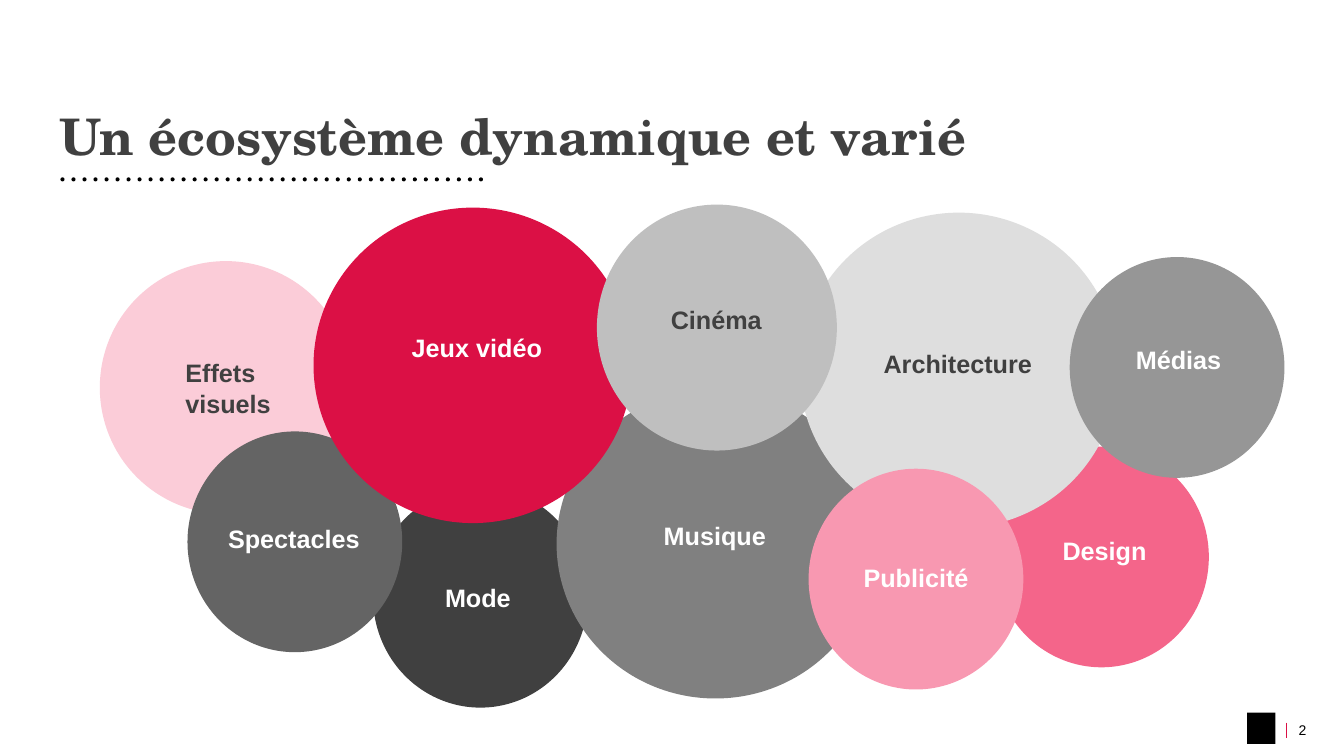
from dataclasses import dataclass

from lxml.etree import SubElement
from pptx import Presentation
from pptx.dml.color import RGBColor
from pptx.enum.shapes import MSO_CONNECTOR, MSO_SHAPE
from pptx.enum.text import MSO_ANCHOR, PP_ALIGN
from pptx.oxml.ns import qn
from pptx.slide import Slide
from pptx.text.text import TextFrame
from pptx.util import Inches, Pt

COLOURS = {
    "black": "000000",
    "white": "FFFFFF",
    "charcoal": "404040",
    "dark grey": "646464",
    "grey": "808080",
    "mid grey": "969696",
    "silver": "BFBFBF",
    "pale grey": "DEDEDE",
    "crimson": "DB1045",
    "rose": "F4658A",
    "pink": "F898B1",
    "pale pink": "FBCCD8",
}
SERIF = "TeX Gyre Schola"
SANS = "Arial"
DOT_COUNT = 39
DOT_FIRST, DOT_LAST = 0.6, 4.75


@dataclass(frozen=True)
class Box:
    left: float
    top: float
    width: float
    height: float


@dataclass(frozen=True)
class Bubble:
    name: str
    fill: str
    circle: Box
    label: Box
    text_colour: str = "white"
    alignment: PP_ALIGN = PP_ALIGN.CENTER


BUBBLES = [
    Bubble("Mode", "charcoal", Box(3.7, 4.83, 2.13, 2.19), Box(4.28, 5.73, 0.92, 0.4)),
    Bubble("Design", "rose", Box(9.86, 4.43, 2.13, 2.19), Box(10.34, 5.26, 1.23, 0.4)),
    Bubble("Effets\nvisuels", "pale pink", Box(0.99, 2.59, 2.5, 2.51),
           Box(1.74, 3.5, 1.44, 0.71), "charcoal", PP_ALIGN.LEFT),
    Bubble("Spectacles", "dark grey", Box(1.86, 4.28, 2.13, 2.19), Box(2.13, 5.14, 1.57, 0.4)),
    Bubble("Musique", "grey", Box(5.52, 3.86, 3.15, 3.07), Box(6.36, 5.11, 1.46, 0.4)),
    Bubble("Jeux vidéo", "crimson", Box(3.11, 2.06, 3.16, 3.13), Box(3.65, 3.25, 2.16, 0.4)),
    Bubble("Architecture", "pale grey", Box(7.93, 2.11, 3.16, 3.13),
           Box(8.58, 3.41, 1.84, 0.4), "charcoal"),
    Bubble("Publicité", "pink", Box(8.02, 4.65, 2.13, 2.19), Box(8.34, 5.53, 1.49, 0.4)),
    Bubble("Médias", "mid grey", Box(10.61, 2.55, 2.13, 2.19), Box(11.16, 3.37, 1.06, 0.4)),
    Bubble("Cinéma", "silver", Box(5.92, 2.03, 2.38, 2.44),
           Box(6.34, 2.97, 1.53, 0.4), "charcoal"),
]


def colour(name: str) -> RGBColor:
    return RGBColor.from_string(COLOURS[name])


def inches(box: Box) -> tuple[Inches, Inches, Inches, Inches]:
    return Inches(box.left), Inches(box.top), Inches(box.width), Inches(box.height)


def add_filled(slide: Slide, kind: MSO_SHAPE, box: Box, fill: str) -> None:
    shape = slide.shapes.add_shape(kind, *inches(box))
    shape.shadow.inherit = False
    shape.fill.solid()
    shape.fill.fore_color.rgb = colour(fill)
    shape.line.fill.background()


def add_text(slide: Slide, text: str, box: Box, size: float, font: str, text_colour: str,
             bold: bool = False, alignment: PP_ALIGN = PP_ALIGN.LEFT) -> TextFrame:
    text_frame = slide.shapes.add_textbox(*inches(box)).text_frame
    text_frame.word_wrap = True
    text_frame.text = text
    for paragraph in text_frame.paragraphs:
        paragraph.alignment = alignment
        for run in paragraph.runs:
            run.font.size = Pt(size)
            run.font.name = font
            run.font.bold = bold
            run.font.color.rgb = colour(text_colour)
    return text_frame


def remove_margins(text_frame: TextFrame) -> None:
    text_frame.margin_left = text_frame.margin_right = 0
    text_frame.margin_top = text_frame.margin_bottom = 0


def add_title(slide: Slide) -> None:
    text_frame = add_text(slide, "Un écosystème dynamique et varié",
                          Box(0.59, 0.59, 12.15, 1.06), 36, SERIF, "charcoal", True)
    remove_margins(text_frame)
    text_frame.vertical_anchor = MSO_ANCHOR.BOTTOM
    text_frame.paragraphs[0].line_spacing = 0.9


def add_dotted_rule(slide: Slide) -> None:
    pitch = (DOT_LAST - DOT_FIRST) / (DOT_COUNT - 1)
    for index in range(DOT_COUNT):
        dot = Box(DOT_FIRST + index * pitch, 1.76, 0.04, 0.04)
        add_filled(slide, MSO_SHAPE.OVAL, dot, "black")


def add_bubble(slide: Slide, bubble: Bubble) -> None:
    add_filled(slide, MSO_SHAPE.OVAL, bubble.circle, bubble.fill)
    add_text(slide, bubble.name, bubble.label, 18, SANS, bubble.text_colour, True,
             bubble.alignment)


def add_footer(slide: Slide) -> None:
    add_filled(slide, MSO_SHAPE.RECTANGLE, Box(12.37, 7.07, 0.28, 0.31), "black")
    divider = slide.shapes.add_connector(
        MSO_CONNECTOR.STRAIGHT, Inches(12.76), Inches(7.17), Inches(12.76), Inches(7.32))
    divider.line.color.rgb = colour("crimson")
    divider.line.width = Pt(0.5)
    SubElement(divider.element.spPr, qn("a:effectLst"))
    page_number = add_text(slide, "2", Box(12.88, 7.16, 0.25, 0.17), 10, SANS, "black")
    remove_margins(page_number)


def main() -> None:
    presentation = Presentation()
    presentation.slide_width = Inches(13.33)
    presentation.slide_height = Inches(7.5)
    slide = presentation.slides.add_slide(presentation.slide_layouts[6])
    add_footer(slide)
    add_dotted_rule(slide)
    for bubble in BUBBLES:
        add_bubble(slide, bubble)
    add_title(slide)
    presentation.save("out.pptx")


if __name__ == "__main__":
    main()
